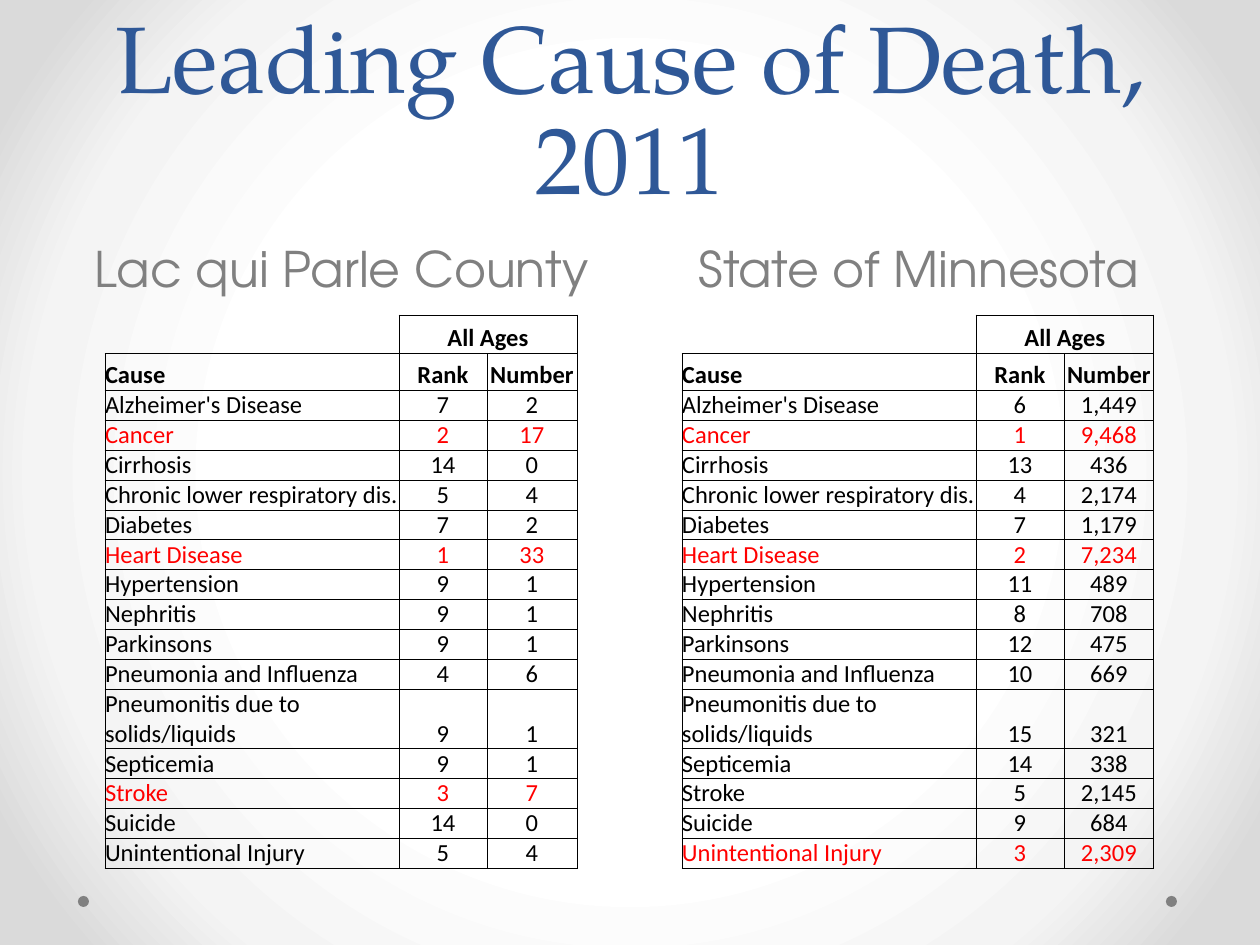
from lxml import etree
from pptx import Presentation
from pptx import util as u
from pptx.dml.color import RGBColor
from pptx.enum import shapes, text
from pptx.oxml.ns import qn

PX = 914400 / 126
BLUE = RGBColor(0x2F, 0x58, 0x97)
GRAY = RGBColor(0x80, 0x80, 0x80)
BLACK = RGBColor(0, 0, 0)
RED = RGBColor(0xFF, 0, 0)
BACKDROP = [(50, RGBColor(0xFF, 0xFF, 0xFF)), (76, RGBColor(0xF4, 0xF4, 0xF4)),
            (92, RGBColor(0xDA, 0xDA, 0xDA))]

TITLE = {"size": u.Pt(54), "name": "TeX Gyre Pagella", "bold": False}
HEADING = {"size": u.Pt(28), "name": "TeX Gyre Adventor", "bold": False}
HEADER = {"size": u.Pt(14), "name": "Calibri", "bold": True}
ENTRY = {**HEADER, "bold": False}
CELL = {"margin_left": 0, "margin_right": 0, "margin_top": 0, "margin_bottom": 0,
        "vertical_anchor": text.MSO_ANCHOR.BOTTOM}

COLUMNS = [294, 88, 90]
ROW, HEADER_ROW, DOUBLE_ROW = 29, 37, 59
CAUSES = ["Alzheimer's Disease", "Cancer", "Cirrhosis", "Chronic lower respiratory dis.",
          "Diabetes", "Heart Disease", "Hypertension", "Nephritis", "Parkinsons",
          "Pneumonia and Influenza", "Pneumonitis due to solids/liquids", "Septicemia",
          "Stroke", "Suicide", "Unintentional Injury"]
COUNTY = {"ranks": [7, 2, 14, 5, 7, 1, 9, 9, 9, 4, 9, 9, 3, 14, 5],
          "numbers": [2, 17, 0, 4, 2, 33, 1, 1, 1, 6, 1, 1, 7, 0, 4]}
STATE = {"ranks": [6, 1, 13, 4, 7, 2, 11, 8, 12, 10, 15, 14, 5, 9, 3],
         "numbers": [1449, 9468, 436, 2174, 1179, 7234, 489, 708, 475, 669, 321, 338,
                     2145, 684, 2309]}
TOP_RANKS = 3


def px(length):
    return u.Emu(round(length * PX))


def apply(target, values):
    for key, value in values.items():
        setattr(target, key, value)


def write(paragraph, wording, font, color, align):
    run = paragraph.add_run()
    run.text = wording
    paragraph.alignment = align
    apply(run.font, font)
    run.font.color.rgb = color


def paint_background(slide):
    slide.background.fill.gradient()
    gradient = next(slide.element.iter(qn("a:gradFill")))
    for child in list(gradient):
        gradient.remove(child)
    stops = etree.SubElement(gradient, qn("a:gsLst"))
    for position, color in BACKDROP:
        stop = etree.SubElement(stops, qn("a:gs"), pos=str(position * 1000))
        etree.SubElement(stop, qn("a:srgbClr"), val=str(color))
    route = etree.SubElement(gradient, qn("a:path"), path="circle")
    etree.SubElement(route, qn("a:fillToRect"), l="50000", t="50000", r="50000", b="50000")


def add_dot(slide, left):
    dot = slide.shapes.add_shape(shapes.MSO_SHAPE.OVAL, px(left), px(896), px(11), px(11))
    dot.shadow.inherit = False
    dot.fill.solid()
    dot.fill.fore_color.rgb = GRAY
    dot.line.fill.background()


def fill_placeholder(holder, box, wording, font, color, spacing):
    apply(holder, dict(zip(("left", "top", "width", "height"), map(px, box))))
    apply(holder.text_frame, {"word_wrap": True, "auto_size": text.MSO_AUTO_SIZE.NONE,
                              "vertical_anchor": text.MSO_ANCHOR.BOTTOM})
    paragraph = holder.text_frame.paragraphs[0]
    apply(paragraph, spacing)
    write(paragraph, wording, font, color, text.PP_ALIGN.CENTER)


def draw_borders(cell, hidden):
    properties = cell._tc.get_or_add_tcPr()
    for place, side in enumerate("LRTB"):
        line = etree.Element(qn("a:ln" + side), w=str(u.Pt(0.5)))
        if side in hidden:
            etree.SubElement(line, qn("a:noFill"))
        else:
            color = etree.SubElement(line, qn("a:solidFill"))
            etree.SubElement(color, qn("a:srgbClr"), val=str(BLACK))
        properties.insert(place, line)


def add_cause_table(slide, left, figures):
    rows = [("", "All Ages", ""), ("Cause", "Rank", "Number")]
    rows += [(cause, str(rank), f"{number:,}") for cause, rank, number
             in zip(CAUSES, figures["ranks"], figures["numbers"])]
    heights = [ROW, HEADER_ROW] + [DOUBLE_ROW if len(c) > 30 else ROW for c in CAUSES]
    colors = [BLACK] * 2 + [RED if r <= TOP_RANKS else BLACK for r in figures["ranks"]]
    table = slide.shapes.add_table(len(rows), len(COLUMNS), px(left), px(315),
                                   px(sum(COLUMNS)), px(sum(heights))).table
    apply(table, {"first_row": False, "horz_banding": False})
    for column, width in zip(table.columns, COLUMNS):
        column.width = px(width)
    for r, (row, height) in enumerate(zip(table.rows, heights)):
        row.height = px(height)
        for c, cell in enumerate(row.cells):
            apply(cell, CELL)
            cell.fill.background()
            draw_borders(cell, "LT" if r == c == 0 else "")
            if rows[r][c]:
                write(cell.text_frame.paragraphs[0], rows[r][c], HEADER if r < 2 else ENTRY,
                      colors[r], text.PP_ALIGN.CENTER if c else text.PP_ALIGN.LEFT)
    table.cell(0, 1).merge(table.cell(0, 2))


def main():
    deck = Presentation()
    apply(deck, {"slide_width": px(1260), "slide_height": px(945)})
    slide = deck.slides.add_slide(deck.slide_layouts.get_by_name("Comparison"))
    title, county, county_area, state, state_area = slide.placeholders
    for area in (county_area, state_area):
        area.element.getparent().remove(area.element)

    paint_background(slide)
    for left in (1166, 78):
        add_dot(slide, left)
    fill_placeholder(title, (63, 0, 1134, 220), "Leading Cause of Death, 2011", TITLE, BLUE,
                     {"line_spacing": u.Pt(58)})
    for holder, left, wording in ((county, 63, "Lac qui Parle County"),
                                  (state, 640, "State of Minnesota")):
        fill_placeholder(holder, (left, 220, 557, 84), wording, HEADING, GRAY,
                         {"space_before": u.Pt(5.6)})
    for left, figures in ((105, COUNTY), (682, STATE)):
        add_cause_table(slide, left, figures)
    deck.save("out.pptx")


if __name__ == "__main__":
    main()
